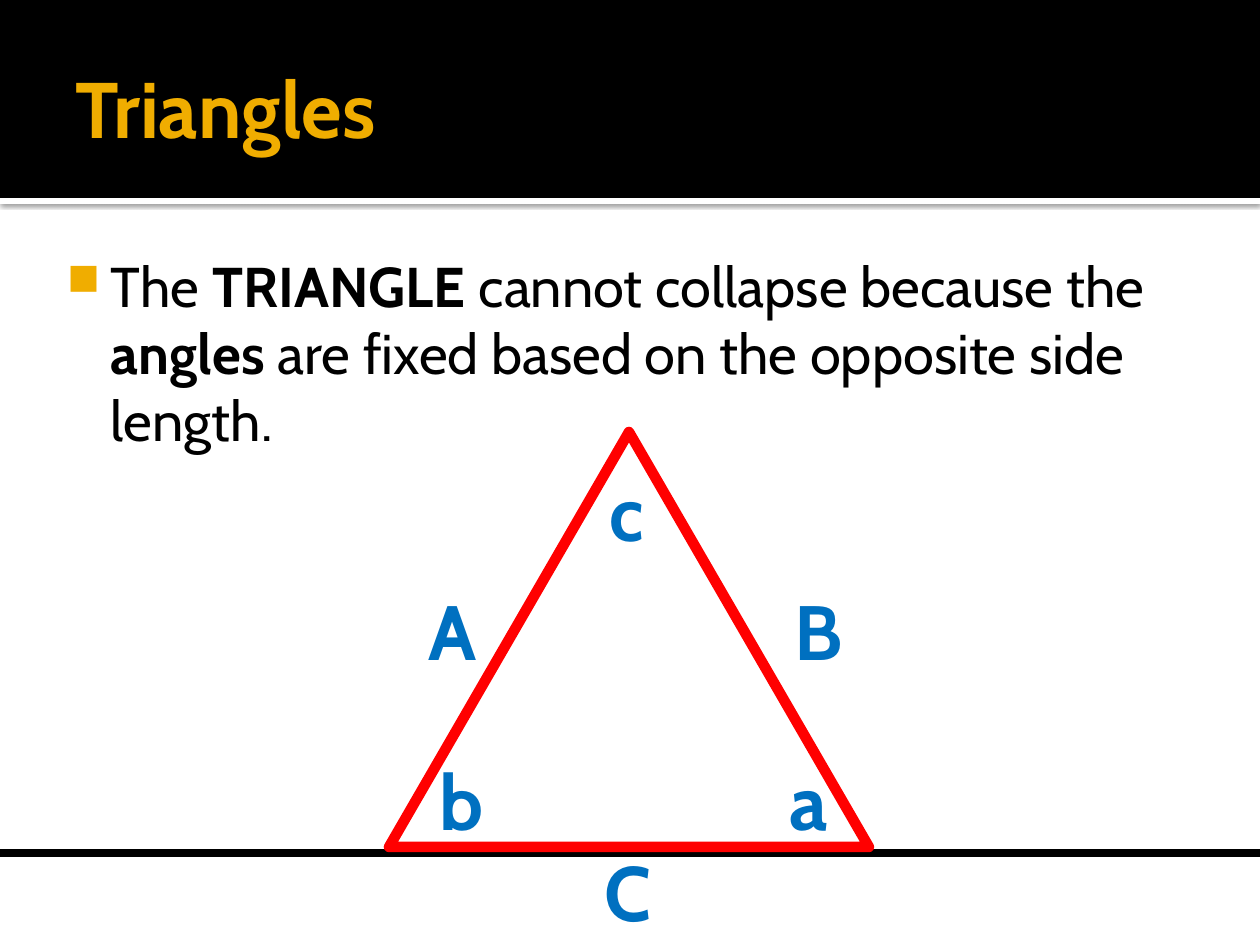
from lxml.etree import SubElement
from pptx import Presentation
from pptx.dml.color import RGBColor
from pptx.enum.shapes import MSO_CONNECTOR as Connector, MSO_SHAPE as Shape
from pptx.enum.text import MSO_ANCHOR as Anchor, MSO_AUTO_SIZE as AutoSize, PP_ALIGN as Align
from pptx.oxml import parse_xml
from pptx.oxml.ns import nsdecls, qn
from pptx.util import Pt

TITLE = "Triangles"
BODY = [
    ("The ", False),
    ("TRIANGLE", True),
    (" cannot collapse because the ", False),
    ("angles", True),
    (" are fixed based on the opposite side length.", False),
]
LABELS = [
    ("A", 416, 577), ("C", 592, 839), ("B", 782, 577),
    ("a", 774, 747), ("b", 426, 747), ("c", 592, 459),
]
LABEL_SIZE = (69, 106)
TITLE_BOX = (63, 21, 1134, 173)
BODY_BOX = (43, 238, 1147, 273)
TRIANGLE_BOX = (389, 432, 480, 415)
WIDTH, HEIGHT, BAND, STRIP, GROUND = 1260, 945, 198, 6, 853
PX = 914400 / 126


class Theme:
    font = "Cabin"
    black, white, gold, red, blue = "000000", "FFFFFF", "F0AD00", "FF0000", "0070C0"
    title, body, label = 45, 32, 44
    ground, side = 4.5, 6


def px(*values):
    return [round(v * PX) for v in values]


def rgb(color):
    return RGBColor.from_string(color)


def apply(obj, **values):
    for name, value in values.items():
        setattr(obj, name, value)


def add_run(p, text, size, color, bold):
    r = p.add_run()
    r.text = text
    apply(r.font, name=Theme.font, size=Pt(size), bold=bold)
    r.font.color.rgb = rgb(color)


def frame(shape, insets, **values):
    tf = shape.text_frame
    sides = ("margin_left", "margin_top", "margin_right", "margin_bottom")
    apply(tf, word_wrap=True, **dict(zip(sides, px(*insets))), **values)
    return tf.paragraphs[0]


def add_band(s, top, height, color):
    sp = s.shapes.add_shape(Shape.RECTANGLE, *px(0, top, WIDTH, height))
    sp.shadow.inherit = False
    sp.fill.solid()
    sp.fill.fore_color.rgb = rgb(color)
    sp.line.fill.background()
    s.shapes.title._element.addprevious(sp._element)
    return sp


def add_shadow(sp):
    effects = sp._element.spPr.find(qn("a:effectLst"))
    effects.append(parse_xml(
        f'<a:outerShdw {nsdecls("a")} blurRad="{Pt(2.5)}" dist="{Pt(0.8)}" dir="5400000">'
        f'<a:srgbClr val="{Theme.black}"><a:alpha val="60000"/></a:srgbClr></a:outerShdw>'))


def add_bullet(p):
    pPr = p._p.get_or_add_pPr()
    left, indent = px(60, -44)
    pPr.set("marL", str(left))
    pPr.set("indent", str(indent))
    SubElement(SubElement(pPr, qn("a:buClr")), qn("a:srgbClr"), val=Theme.gold)
    SubElement(pPr, qn("a:buSzPct"), val="80000")
    SubElement(pPr, qn("a:buChar"), char="■")


def add_title(s):
    title = s.shapes.title
    apply(title, **dict(zip(("left", "top", "width", "height"), px(*TITLE_BOX))))
    p = frame(title, (13, 6, 6, 6), vertical_anchor=Anchor.MIDDLE, auto_size=AutoSize.NONE)
    p.alignment = Align.LEFT
    add_run(p, TITLE, Theme.title, Theme.gold, True)


def add_body(s):
    p = frame(s.shapes.add_textbox(*px(*BODY_BOX)), (8, 13, 13, 6))
    add_bullet(p)
    for text, bold in BODY:
        add_run(p, text, Theme.body, Theme.black, bold)


def add_figure(s):
    ground = s.shapes.add_connector(Connector.STRAIGHT, *px(0, GROUND, WIDTH, GROUND))
    SubElement(ground._element.spPr, qn("a:effectLst"))
    triangle = s.shapes.add_shape(Shape.ISOSCELES_TRIANGLE, *px(*TRIANGLE_BOX))
    triangle.shadow.inherit = False
    triangle.fill.background()
    for sp, color, width in ((ground, Theme.black, Theme.ground), (triangle, Theme.red, Theme.side)):
        sp.line.color.rgb = rgb(color)
        sp.line.width = Pt(width)
    for text, left, top in LABELS:
        box = s.shapes.add_textbox(*px(left, top, *LABEL_SIZE))
        p = frame(box, (13, 6, 13, 6), auto_size=AutoSize.SHAPE_TO_FIT_TEXT)
        p.alignment = Align.CENTER
        add_run(p, text, Theme.label, Theme.blue, True)


def main():
    prs = Presentation()
    prs.slide_width, prs.slide_height = px(WIDTH, HEIGHT)
    s = prs.slides.add_slide(prs.slide_layouts[5])
    add_shadow(add_band(s, BAND, STRIP, Theme.white))
    add_band(s, 0, BAND, Theme.black)
    add_title(s)
    add_body(s)
    add_figure(s)
    prs.save("out.pptx")


if __name__ == "__main__":
    main()
